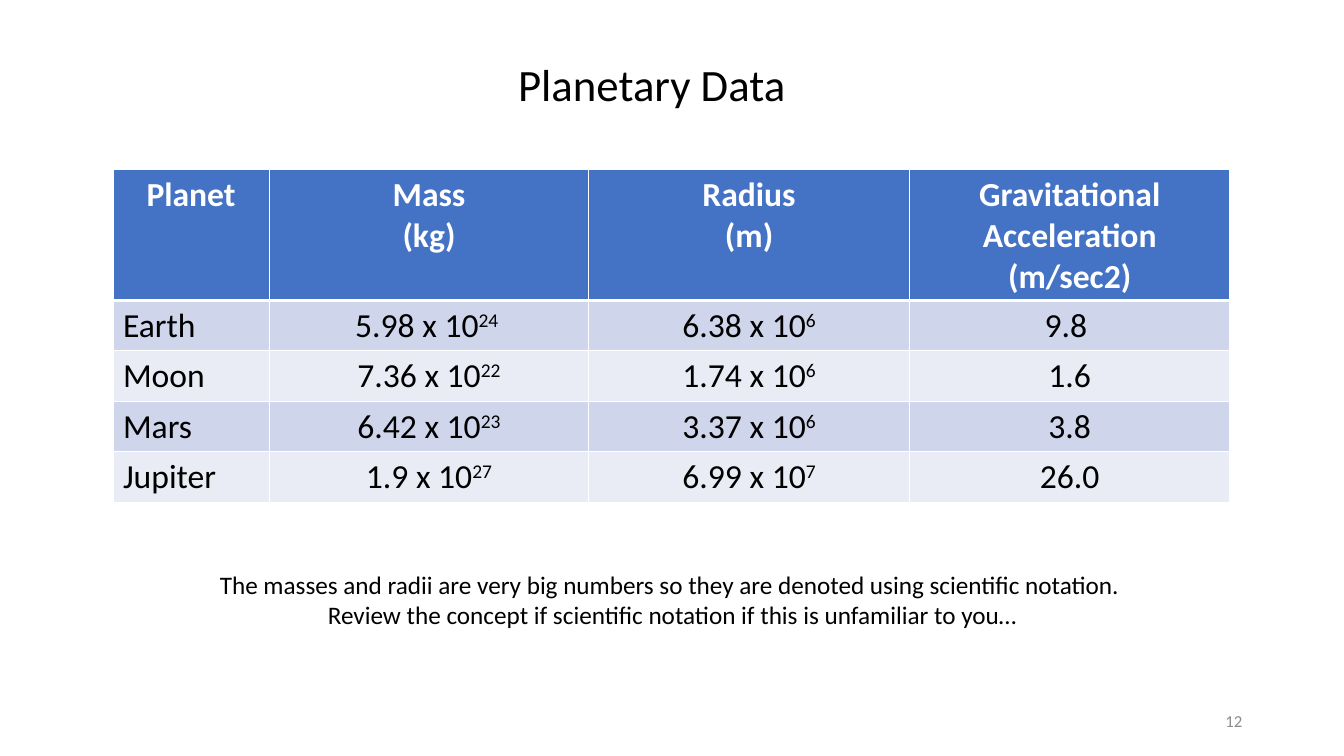
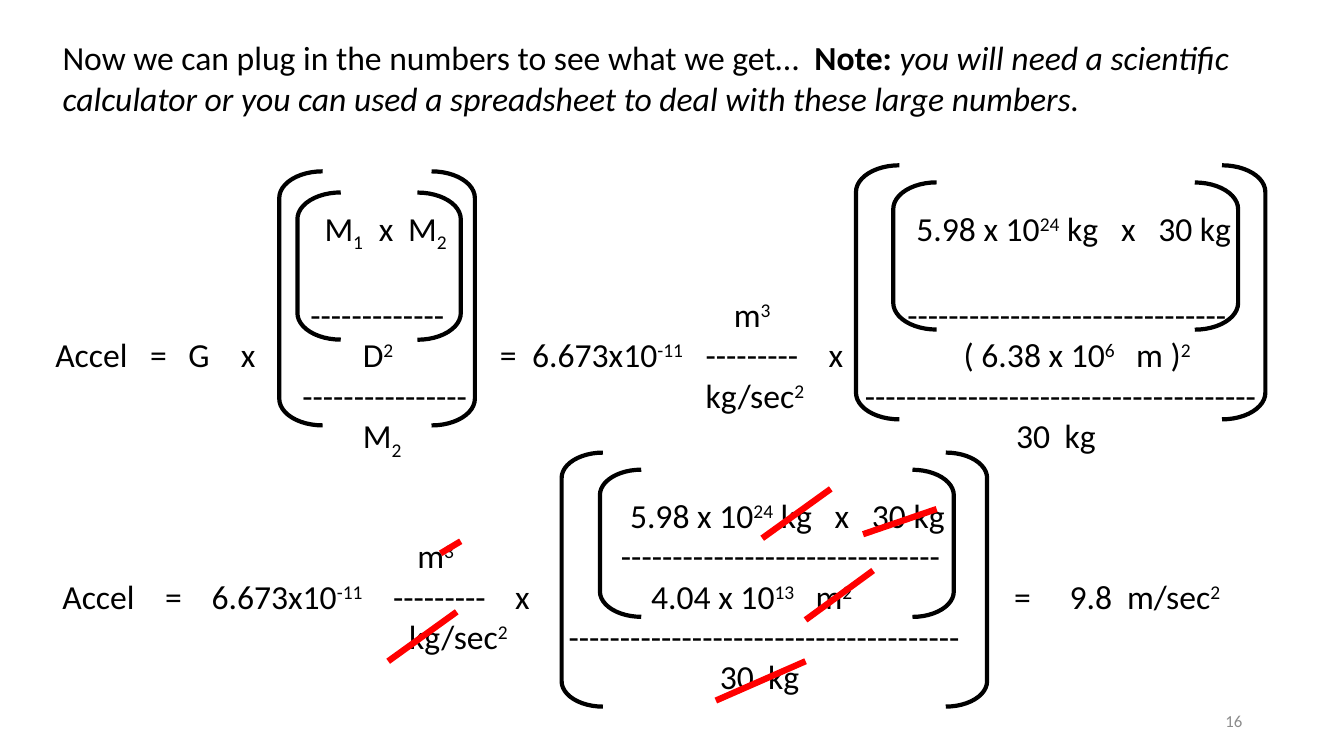
from pptx import Presentation
from pptx.dml.color import RGBColor
from pptx.enum.shapes import MSO_CONNECTOR, MSO_SHAPE
from pptx.enum.text import MSO_ANCHOR, PP_ALIGN
from pptx.oxml.ns import qn
from pptx.util import Inches, Pt
from lxml import etree

LEFT, CENTER, RIGHT = PP_ALIGN.LEFT, PP_ALIGN.CENTER, PP_ALIGN.RIGHT
TOP, MIDDLE = MSO_ANCHOR.TOP, MSO_ANCHOR.MIDDLE
BRACKET, STRAIGHT = MSO_SHAPE.LEFT_BRACKET, MSO_CONNECTOR.STRAIGHT

FONT = "Calibri"
BODY_SIZE = 24
MARGIN_X, MARGIN_Y = 0.1, 0.05
COLORS = {"text": "000000", "white": "FFFFFF", "header": "4472C4",
          "band_dark": "CFD5EA", "band_light": "E9EBF5",
          "number": "8C8C8C", "strike": "FF0000"}
# Text between two marks is raised or lowered by this share of its size
SCRIPTS = {"^": 30000, "_": -25000}
PAGE_BOX = (9.42, 6.95, 3, 0.4)

# Slide content
PLANET_HEADS = ["Planet", "Mass\n(kg)", "Radius\n(m)",
                "Gravitational Acceleration\n(m/sec2)"]
PLANETS = [["Earth", "5.98 x 10^24 ^", "6.38 x 10^6^", "9.8 "],
           ["Moon", "7.36 x 10^22^", "1.74 x 10^6^", "1.6"],
           ["Mars", "6.42 x 10^23^", "3.37 x 10^6^", "3.8"],
           ["Jupiter", "1.9 x 10^27^", "6.99 x 10^7^", "26.0"]]
PLANET_WIDTHS = [1.55, 3.17, 3.18, 3.18]
NOTATION_NOTE = ("The masses and radii are very big numbers so they are denoted "
                 "using scientific notation.  Review the concept if scientific "
                 "notation if this is unfamiliar to you…")
PLUG_IN = [("Now we can plug in the numbers to see what we get…  ", {}),
           ("Note: ", {"bold": True}),
           ("you will need a scientific calculator or you can used a spreadsheet "
            "to deal with these large numbers.", {"italic": True})]

# Equations: each row is the space after it (points) and its terms as
# (tab position, text); brackets are (left, right, top, height),
# strikes are (x1, y1, x2, y2)
OUTER, INNER = 2.52, 1.46
GENERAL = {
    "rows": [
        (29, [(2.67, "M_1_"), (3.21, "x"), (3.5, "M_2_"),
              (8.54, "5.98 x 10^24^ kg"), (10.57, "x"), (10.94, "30 kg")]),
        (0, [(2.53, "-" * 13), (6.73, "m^3^"), (8.45, "-" * 31)]),
        (0, [(0, "Accel"), (0.94, "="), (1.32, "G"), (1.84, "x"),
             (3.05, "D^2^"), (4.41, "="), (4.73, "6.673x10^-11^"),
             (6.45, "-" * 9), (7.67, "x"), (9.01, "( 6.38 x 10^6^"),
             (10.72, "m )^2^")]),
        (0, [(2.45, "-" * 16), (6.45, "kg/sec^2^"), (8.03, "-" * 38)]),
        (0, [(3.05, "M_2_"), (9.53, "30"), (10.01, "kg")])],
    "bracket_width": 0.43,
    "brackets": [(8.31, 11.73, -0.2, INNER), (2.4, 4.02, -0.1, INNER),
                 (7.94, 12, -0.37, OUTER), (2.22, 4.16, -0.31, OUTER)],
    "strikes": []}
SOLVED = {
    "rows": [
        (0, [(5.63, "5.98 x 10^24^ kg"), (7.66, "x"), (8.03, "30 kg")]),
        (0, [(3.52, "m^3^"), (5.54, "-" * 31)]),
        (0, [(0, "Accel"), (1.02, "="), (1.48, "6.673x10^-11^"),
             (3.28, "-" * 9), (4.49, "x"), (5.84, "4.04 x 10^13^"),
             (7.47, "m^2^"), (9.44, "="), (9.99, "9.8"),
             (10.56, "m/sec^2^")]),
        (0, [(3.44, "kg/sec^2^"), (5.02, "-" * 38)]),
        (0, [(6.52, "30"), (7, "kg")])],
    "bracket_width": 0.41,
    "brackets": [(5.33, 8.84, -0.2, INNER), (4.95, 9.17, -0.37, OUTER)],
    "strikes": [(7.94, 0.44, 8.67, 0.19), (6.48, 2.09, 7.37, 1.7),
                (6.94, 0.48, 7.62, -0.01), (3.23, 1.7, 3.91, 1.21),
                (7.37, 1.29, 8.04, 0.8), (3.75, 0.63, 3.95, 0.51)]}


def rgb(name):
    return RGBColor.from_string(COLORS[name])


def box_inches(box):
    return [Inches(length) for length in box]


def style_run(run, size=BODY_SIZE, color="text", bold=False, italic=False):
    font = run.font
    font.name, font.size = FONT, Pt(size)
    font.bold, font.italic = bold, italic
    font.color.rgb = rgb(color)


def add_scripted(paragraph, text, **style):
    """Write text, raising or lowering the parts between marks."""
    mark = next((m for m in SCRIPTS if m in text), None)
    for i, part in enumerate(text.split(mark) if mark else [text]):
        if part:
            run = paragraph.add_run()
            run.text = part
            style_run(run, **style)
            if i % 2:
                run._r.get_or_add_rPr().set("baseline", str(SCRIPTS[mark]))


def set_frame(frame, anchor):
    frame.word_wrap = True
    frame.vertical_anchor = anchor
    frame.margin_left = frame.margin_right = Inches(MARGIN_X)
    frame.margin_top = frame.margin_bottom = Inches(MARGIN_Y)


def add_label(slide, box, text, align=LEFT, anchor=TOP, **style):
    frame = slide.shapes.add_textbox(*box_inches(box)).text_frame
    set_frame(frame, anchor)
    frame.text = text
    frame.paragraphs[0].alignment = align
    for run in frame.paragraphs[0].runs:
        style_run(run, **style)


def new_slide(prs, number, title_box, title_parts, align, size):
    """Add a slide with its title and page number."""
    slide = prs.slides.add_slide(prs.slide_layouts[5])
    title = slide.shapes.title
    title.left, title.top, title.width, title.height = box_inches(title_box)
    set_frame(title.text_frame, TOP)
    heading = title.text_frame.paragraphs[0]
    heading.alignment = align
    for text, emphasis in title_parts:
        run = heading.add_run()
        run.text = text
        style_run(run, size, **emphasis)
    add_label(slide, PAGE_BOX, str(number), RIGHT, MIDDLE, size=12, color="number")
    return slide


def set_borders(cell, **widths):
    properties = cell._tc.get_or_add_tcPr()
    for side in "LRTB":
        line = etree.SubElement(properties, qn(f"a:ln{side}"),
                                w=str(Pt(widths.get(side, 1))))
        fill = etree.SubElement(line, qn("a:solidFill"))
        etree.SubElement(fill, qn("a:srgbClr"), val=COLORS["white"])


def add_planet_table(slide, left, top, row_height):
    """Header row plus one banded row for each planet; rows grow to fit."""
    rows = [PLANET_HEADS] + PLANETS
    box = (left, top, sum(PLANET_WIDTHS), row_height * len(rows))
    table = slide.shapes.add_table(len(rows), len(PLANET_HEADS),
                                   *box_inches(box)).table
    for column, width in zip(table.columns, PLANET_WIDTHS):
        column.width = Inches(width)
    for r, values in enumerate(rows):
        band = "header" if r == 0 else "band_dark" if r % 2 else "band_light"
        for c, value in enumerate(values):
            cell = table.cell(r, c)
            set_borders(cell, **({"B": 3}, {"T": 3}, {}, {}, {})[r])
            cell.fill.solid()
            cell.fill.fore_color.rgb = rgb(band)
            for i, line in enumerate(value.split("\n")):
                frame = cell.text_frame
                paragraph = frame.add_paragraph() if i else frame.paragraphs[0]
                paragraph.alignment = LEFT if r and not c else CENTER
                add_scripted(paragraph, line, bold=r == 0,
                             color="text" if r else "white")


def set_tabs(paragraph, positions):
    tabs = etree.SubElement(paragraph._p.get_or_add_pPr(), qn("a:tabLst"))
    for position in positions:
        etree.SubElement(tabs, qn("a:tab"), pos=str(Inches(position)), algn="l")


def add_terms(shapes, box, rows):
    """One paragraph for each row, its terms set on tab stops."""
    frame = shapes.add_textbox(*box_inches(box)).text_frame
    set_frame(frame, TOP)
    for i, (space_after, terms) in enumerate(rows):
        paragraph = frame.add_paragraph() if i else frame.paragraphs[0]
        paragraph.space_after = Pt(space_after)
        set_tabs(paragraph, [x for x, _ in terms if x])
        for x, text in terms:
            add_scripted(paragraph, "\t" + text if x else text)


def add_brackets(shapes, left, right, top, height, width):
    for x, turn in ((left, 0), (right - width, 180)):
        bracket = shapes.add_shape(BRACKET, *box_inches((x, top, width, height)))
        bracket.adjustments[0] = 0.616
        bracket.rotation = turn
        bracket.shadow.inherit = False
        bracket.fill.background()
        bracket.line.color.rgb = rgb("text")
        bracket.line.width = Pt(3)


def add_strike(shapes, *ends):
    strike = shapes.add_connector(STRAIGHT, *box_inches(ends))
    strike.line.color.rgb = rgb("strike")
    strike.line.width = Pt(4.5)
    etree.SubElement(strike._element.spPr, qn("a:effectLst"))


def add_equation(slide, box, equation):
    """Group of terms, brackets and cancelling strokes, measured from the box."""
    shapes = slide.shapes.add_group_shape().shapes
    add_terms(shapes, box, equation["rows"])
    left, top = box[0] + MARGIN_X, box[1]
    for x1, x2, y, height in equation["brackets"]:
        add_brackets(shapes, left + x1, left + x2, top + y, height,
                     equation["bracket_width"])
    for x1, y1, x2, y2 in equation["strikes"]:
        add_strike(shapes, left + x1, top + y1, left + x2, top + y2)


def planetary_data(prs):
    slide = new_slide(prs, 12, (2.35, 0.51, 8.23, 0.64),
                      [("Planetary Data", {})], CENTER, 32)
    add_planet_table(slide, 1.12, 1.68, 0.41)
    add_label(slide, (1.79, 5.6, 9.76, 0.71), NOTATION_NOTE, CENTER, size=18)


def plug_in_numbers(prs):
    slide = new_slide(prs, 16, (0.52, 0.32, 12.04, 0.91), PLUG_IN, LEFT, BODY_SIZE)
    add_equation(slide, (0.45, 2.01, 12.68, 2.52), GENERAL)
    add_equation(slide, (0.52, 4.86, 12.02, 2.52), SOLVED)


def main():
    prs = Presentation()
    prs.slide_width, prs.slide_height = Inches(13.33), Inches(7.5)
    planetary_data(prs)
    plug_in_numbers(prs)
    prs.save("out.pptx")


if __name__ == "__main__":
    main()
